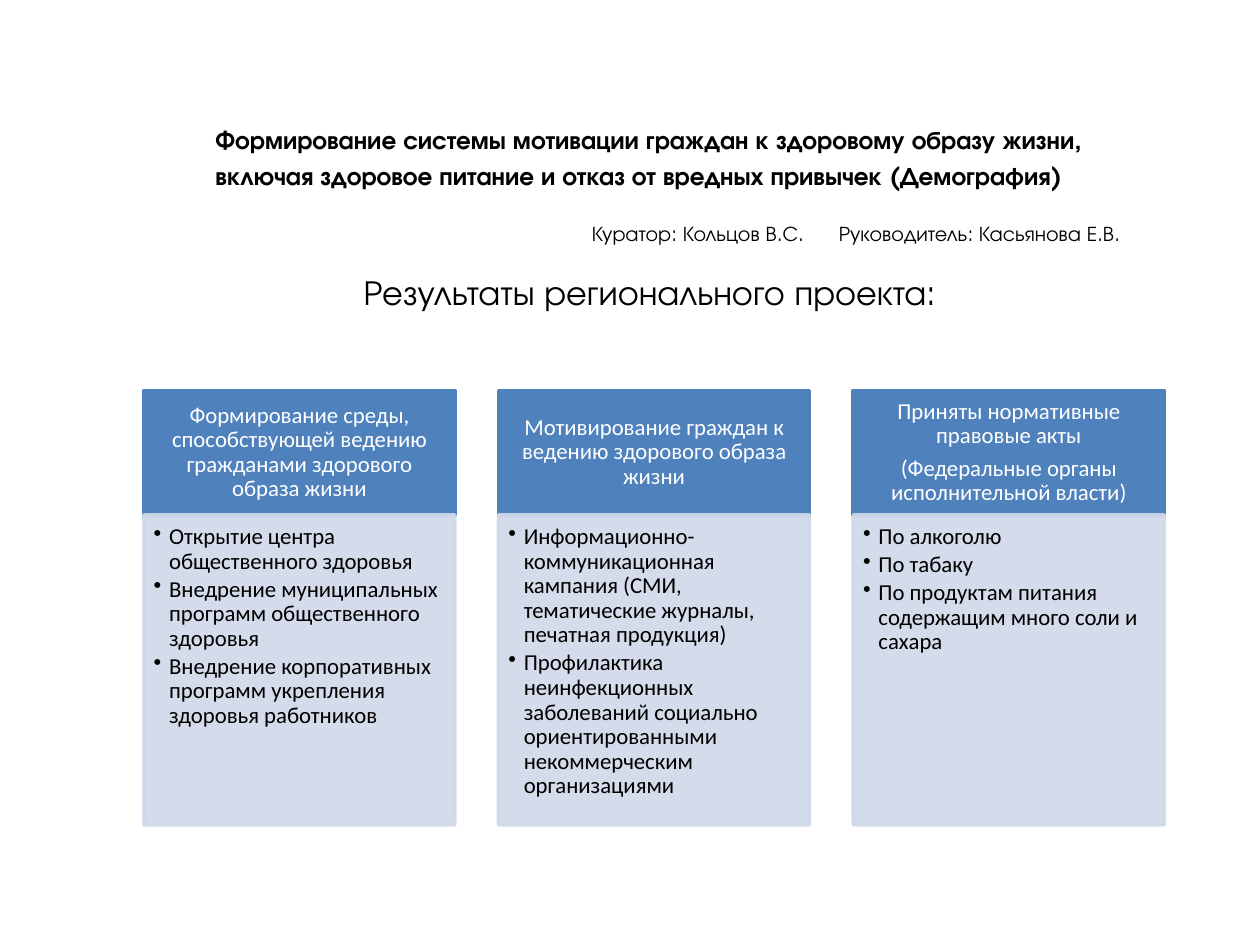
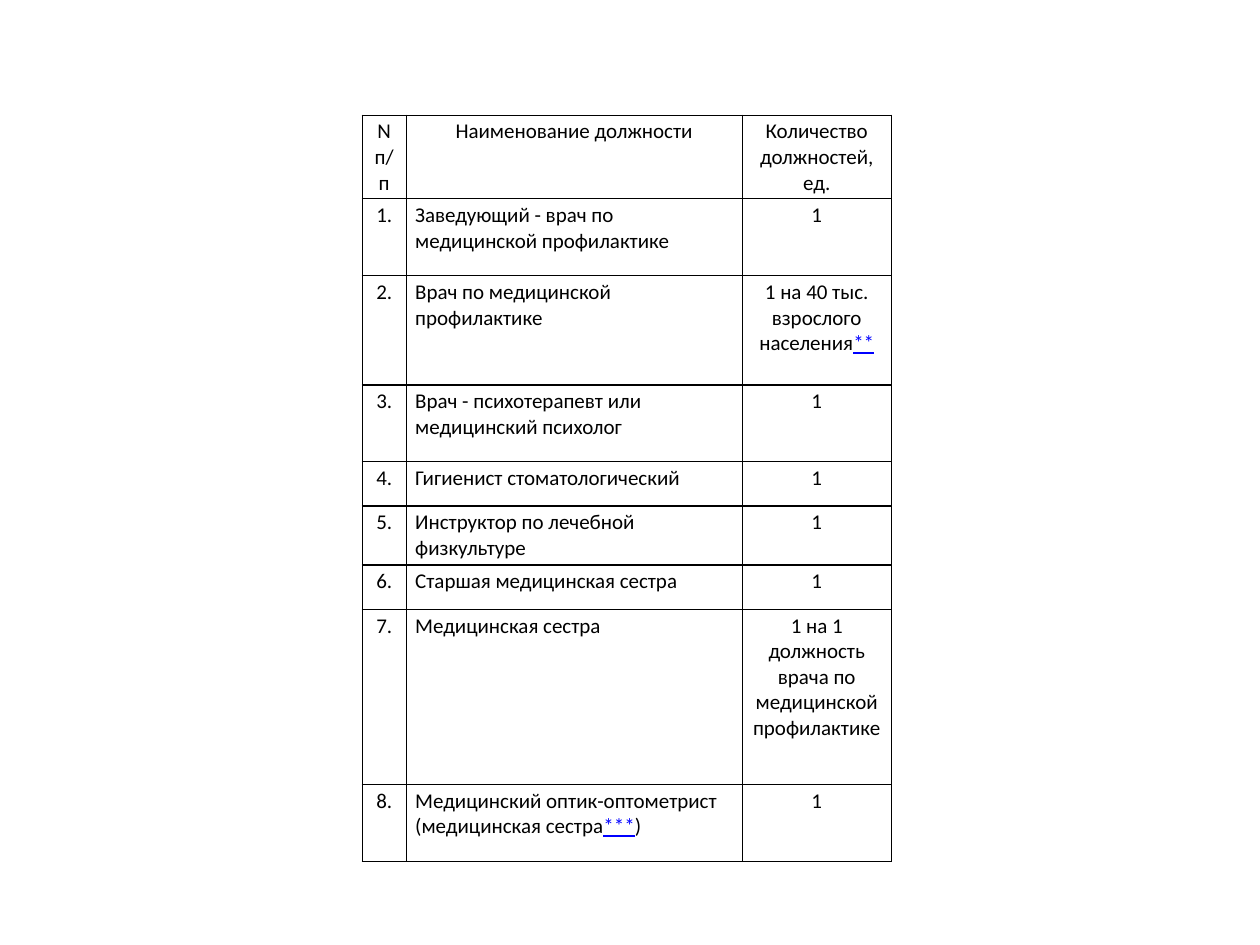
from itertools import groupby

from lxml.etree import SubElement
from pptx import Presentation
from pptx.dml.color import RGBColor
from pptx.enum.shapes import MSO_SHAPE as Shape
from pptx.enum.text import MSO_ANCHOR as Anchor, MSO_AUTO_SIZE as AutoSize, PP_ALIGN as Align
from pptx.oxml.ns import qn
from pptx.util import Cm, Pt

COLORS = {
    "text": "000000",
    "paper": "FFFFFF",
    "header": "4F81BD",
    "card": "D0D8E8",
    "footnote": "0000FF",
}
HEADING_FONT = "TeX Gyre Adventor"
BODY_FONT = "Calibri"

RESULTS = [
    (["Формирование среды, способствующей ведению гражданами здорового образа жизни"],
     ["Открытие центра общественного здоровья",
      "Внедрение муниципальных программ общественного здоровья",
      "Внедрение корпоративных программ укрепления здоровья работников"]),
    (["Мотивирование граждан к ведению здорового образа жизни"],
     ["Информационно-коммуникационная кампания (СМИ, тематические журналы, печатная продукция)",
      "Профилактика неинфекционных заболеваний социально ориентированными "
      "некоммерческим организациями"]),
    (["Приняты нормативные правовые акты", "(Федеральные органы исполнительной власти)"],
     ["По алкоголю",
      "По табаку",
      "По продуктам питания содержащим много соли и сахара"]),
]

STAFF_HEADER = ("N\nп/п", "Наименование должности", "Количество должностей, ед.")
# Position, number of posts, row height in cm
STAFF = [
    ("Заведующий - врач по медицинской профилактике", "1", 1.55),
    ("Врач по медицинской профилактике", "1 на 40 тыс. взрослого населения**", 2.2),
    ("Врач - психотерапевт или медицинский психолог", "1", 1.55),
    ("Гигиенист стоматологический", "1", 0.89),
    ("Инструктор по лечебной физкультуре", "1", 1.19),
    ("Старшая медицинская сестра", "1", 0.89),
    ("Медицинская сестра", "1 на 1 должность врача по медицинской профилактике", 3.53),
    ("Медицинский оптик-оптометрист (медицинская сестра***)", "1", 1.55),
]


def rgb(name):
    return RGBColor.from_string(COLORS[name])


class Deck:
    """Holds the style and the current slide."""

    def __init__(self):
        self.presentation = Presentation()
        self.presentation.slide_width = Cm(25.4)
        self.presentation.slide_height = Cm(19.05)
        self.slide = None

    def add_slide(self, layout):
        self.slide = self.presentation.slides.add_slide(
            self.presentation.slide_layouts.get_by_name(layout))

    def format_paragraph(self, paragraph, size, font, color="text", align=Align.LEFT, bold=False):
        paragraph.alignment = align
        for run in paragraph.runs:
            run.font.size = Pt(size)
            run.font.name = font
            run.font.bold = bold
            run.font.color.rgb = rgb(color)

    def title(self, text, left, top, width, height):
        shape = self.slide.shapes.title
        shape.left, shape.top, shape.width, shape.height = map(Cm, (left, top, width, height))
        frame = shape.text_frame
        frame.text = text
        frame.auto_size = AutoSize.NONE
        frame.vertical_anchor = Anchor.MIDDLE
        frame.paragraphs[0].line_spacing = 1.2
        self.format_paragraph(frame.paragraphs[0], 14.4, HEADING_FONT, bold=True)

    def text(self, text, left, top, width, height, size, align=Align.LEFT, tab=None):
        frame = self.slide.shapes.add_textbox(*map(Cm, (left, top, width, height))).text_frame
        frame.word_wrap = True
        frame.text = text
        paragraph = frame.paragraphs[0]
        if tab:
            tabs = SubElement(paragraph._p.get_or_add_pPr(), qn("a:tabLst"))
            SubElement(tabs, qn("a:tab"), pos=str(Cm(tab)), algn="l")
        self.format_paragraph(paragraph, size, HEADING_FONT, align=align)

    def panel(self, lines, left, top, width, height, fill, color, margins,
              gap, align=Align.LEFT, anchor=Anchor.TOP, bullets=False, opacity=100):
        shape = self.slide.shapes.add_shape(Shape.RECTANGLE, *map(Cm, (left, top, width, height)))
        shape.shadow.inherit = False
        shape.fill.solid()
        shape.fill.fore_color.rgb = rgb(fill)
        shape.line.color.rgb = rgb(fill)
        shape.line.width = Pt(2)
        if opacity < 100:
            for color_element in list(shape.element.spPr.iter(qn("a:srgbClr"))):
                SubElement(color_element, qn("a:alpha"), val=str(opacity * 1000))
        frame = shape.text_frame
        frame.word_wrap = True
        frame.vertical_anchor = anchor
        (frame.margin_left, frame.margin_top,
         frame.margin_right, frame.margin_bottom) = map(Cm, margins)
        frame.text = "\n".join(lines)
        for paragraph in frame.paragraphs:
            if bullets:
                self.bullet(paragraph)
            paragraph.line_spacing = 0.9
            paragraph.space_after = Pt(gap)
            self.format_paragraph(paragraph, 13, BODY_FONT, color, align)

    def bullet(self, paragraph, indent=0.31):
        properties = paragraph._p.get_or_add_pPr()
        properties.set("marL", str(Cm(indent)))
        properties.set("indent", str(-Cm(indent)))
        SubElement(properties, qn("a:buChar"), char="•")

    def table(self, rows, left, top, widths, heights, aligns):
        table = self.slide.shapes.add_table(
            len(rows), len(widths), Cm(left), Cm(top), Cm(sum(widths)), Cm(sum(heights))).table
        table.first_row = table.horz_banding = False
        for column, width in zip(table.columns, widths):
            column.width = Cm(width)
        for row_index, (row, height) in enumerate(zip(rows, heights)):
            table.rows[row_index].height = Cm(height)
            for column_index, text in enumerate(row):
                align = aligns[column_index] if row_index else Align.CENTER
                self.cell(table.cell(row_index, column_index), text, align)

    def cell(self, cell, text, align):
        properties = cell._tc.get_or_add_tcPr()
        for side in ("lnL", "lnR", "lnT", "lnB"):
            line = SubElement(properties, qn(f"a:{side}"), w=str(Pt(0.75)))
            SubElement(SubElement(line, qn("a:solidFill")), qn("a:srgbClr"), val=COLORS["text"])
        cell.fill.solid()
        cell.fill.fore_color.rgb = rgb("paper")
        cell.margin_left = cell.margin_right = Cm(0.18)
        cell.margin_top = cell.margin_bottom = Cm(0.08)
        cell.text = text
        for paragraph in cell.text_frame.paragraphs:
            # Asterisks become separate footnote runs
            pieces = ["".join(group) for _, group in groupby(paragraph.text, lambda c: c == "*")]
            paragraph.clear()
            for piece in pieces:
                paragraph.add_run().text = piece
            self.format_paragraph(paragraph, 12, BODY_FONT, align=align)
            for run in paragraph.runs:
                if run.text.startswith("*"):
                    run.font.color.rgb = rgb("footnote")
                    run.font.underline = True


def add_results_slide(deck):
    deck.add_slide("Title Only")
    deck.title("Формирование системы мотивации граждан к здоровому образу жизни, включая "
               "здоровое питание и отказ от вредных привычек (Демография)",
               4.09, 2.34, 20.04, 1.55)
    deck.text("Куратор: Кольцов В.С.\tРуководитель: Касьянова Е.В.",
              11.68, 4.32, 11.6, 0.76, 12, tab=4.98)
    deck.text("Результаты регионального проекта:", 1.3, 5.33, 23.6, 1.12, 20, Align.CENTER)

    # Result cards: header above a bulleted body
    left, pitch, width = 2.9, 7.15, 6.27
    for index, (heading, points) in enumerate(RESULTS):
        card_left = left + index * pitch
        deck.panel(heading, card_left, 7.87, width, 2.51, "header", "paper",
                   (0.25, 0.15, 0.25, 0.15), 4.55, Align.CENTER, Anchor.MIDDLE)
        deck.panel(points, card_left, 10.38, width, 6.25, "card", "text",
                   (0.2, 0.2, 0.25, 0.28), 1.95, bullets=True, opacity=90)


def add_staff_slide(deck):
    deck.add_slide("Blank")
    rows = [STAFF_HEADER]
    rows += [(f"{number}.", position, posts)
             for number, (position, posts, _) in enumerate(STAFF, 1)]
    heights = [1.69] + [height for _, _, height in STAFF]
    deck.table(rows, 7.3, 2.32, (0.89, 6.77, 3.01), heights,
               (Align.CENTER, Align.LEFT, Align.CENTER))


def main():
    deck = Deck()
    add_results_slide(deck)
    add_staff_slide(deck)
    deck.presentation.save("out.pptx")


if __name__ == "__main__":
    main()
